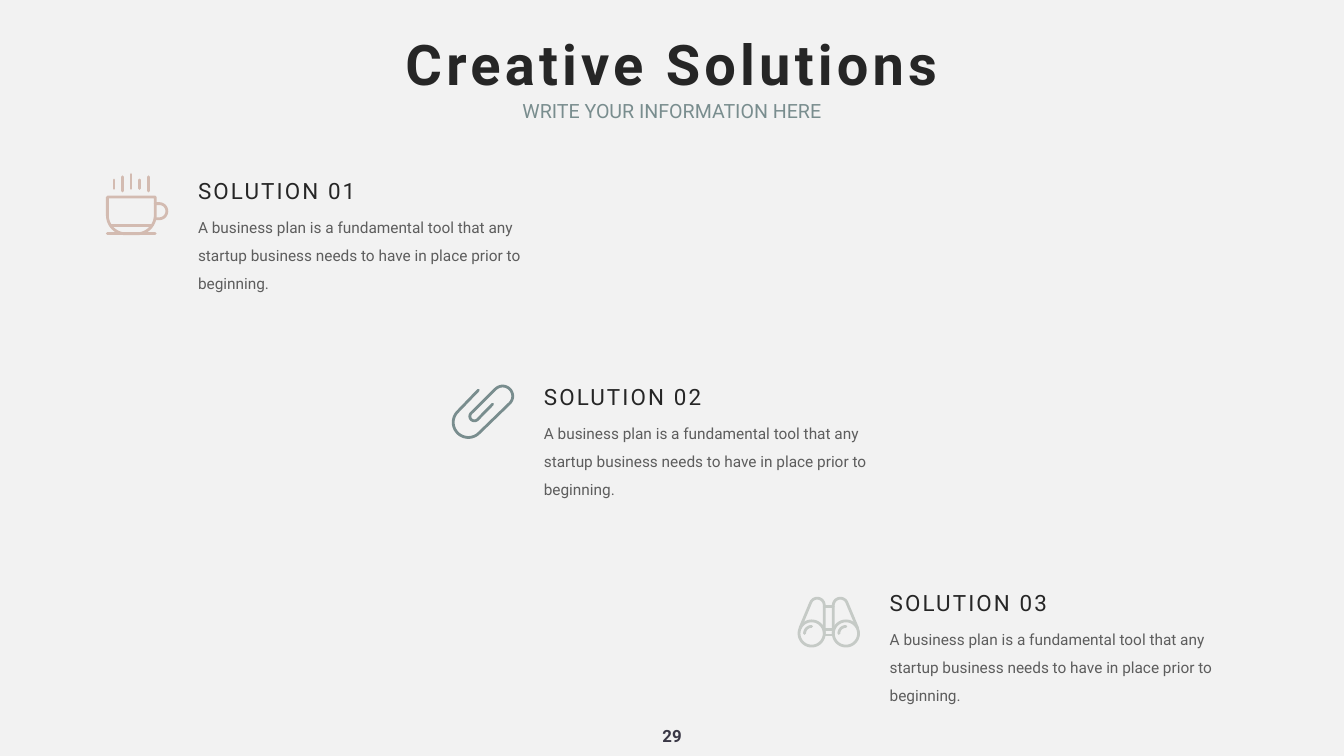
import math

import pptx
import pptx.dml.color
import pptx.enum.text
import pptx.oxml.ns
import pptx.util
from lxml import etree
from pptx.util import Inches

FONT = "Roboto"
COLORS = {
    "background": "F2F2F2",
    "heading": "262626",
    "subtitle": "798D8E",
    "body": "5D5D5D",
    "page": "3A3846",
    "cup": "D3BBB1",
    "clip": "798D8E",
    "binoculars": "C5CAC6",
}
STYLES = {
    "title": {"size": 80, "bold": True, "color": "heading", "spacing": 6},
    "subtitle": {"size": 28, "color": "subtitle", "line": 40, "after": 12},
    "heading": {"size": 32, "color": "heading", "spacing": 3},
    "body": {"size": 22, "color": "body", "line": 40, "after": 18},
    "page": {"size": 24, "bold": True, "color": "page"},
}
BODY = ("A business plan is a fundamental tool that any startup business "
        "needs to have in place prior to beginning.")
ICON_STROKE = 4
ANCHOR = pptx.enum.text.MSO_ANCHOR
ALIGN = pptx.enum.text.PP_ALIGN


def rgb(name):
    return pptx.dml.color.RGBColor.from_string(COLORS[name])


def add_text(slide, box, text, style, anchor=ANCHOR.TOP, align=ALIGN.LEFT, wrap=False):
    look = STYLES[style]
    frame = slide.shapes.add_textbox(*map(Inches, box)).text_frame
    frame_format = {
        "word_wrap": wrap,
        "vertical_anchor": anchor,
        "auto_size": pptx.enum.text.MSO_AUTO_SIZE.SHAPE_TO_FIT_TEXT,
    }
    for key, value in frame_format.items():
        setattr(frame, key, value)
    paragraph = frame.paragraphs[0]
    paragraph.alignment = align
    if "line" in look:
        paragraph.line_spacing = pptx.util.Pt(look["line"])
        paragraph.space_after = pptx.util.Pt(look["after"])
    run = paragraph.add_run()
    run.text = text
    font_format = {
        "name": FONT,
        "size": pptx.util.Pt(look["size"]),
        "bold": look.get("bold", False),
    }
    for key, value in font_format.items():
        setattr(run.font, key, value)
    run.font.color.rgb = rgb(look["color"])
    if "spacing" in look:
        run.font.element.set("spc", str(look["spacing"] * 100)) if hasattr(
            run.font, "element") else run._r.get_or_add_rPr().set("spc", str(look["spacing"] * 100))


def arc(x, y, radius, start, end, steps=24):
    """Points along a circle, with angles in degrees running clockwise from the right."""
    angles = (math.radians(start + (end - start) * i / steps) for i in range(steps + 1))
    return [(x + radius * math.cos(a), y + radius * math.sin(a)) for a in angles]


def cup_strokes():
    steam_spans = [(0.14, 0.31), (0.08, 0.36), (0.03, 0.31), (0.08, 0.36), (0.14, 0.31)]
    steam_spans[3:] = [(0.14, 0.31), (0.08, 0.36)]
    steam = [[(0.16 + 0.17 * i, top), (0.16 + 0.17 * i, bottom)]
             for i, (top, bottom) in enumerate(steam_spans)]
    bowl = ([(0.03, 0.84), (0.03, 0.48), (0.98, 0.48)]
            + arc(0.61, 0.84, 0.37, 0, 90) + arc(0.4, 0.84, 0.37, 90, 180))
    handle = [(0.98, 0.61)] + arc(1.06, 0.76, 0.15, -90, 90) + [(0.98, 0.91)]
    liquid = [(0.1, 1.04), (0.91, 1.04)]
    saucer = [(0.03, 1.21), (0.98, 1.21)]
    return steam + [bowl, handle, liquid, saucer]


def clip_strokes():
    return [[(0.53, 0.1)] + arc(0.33, 0.74, 0.3, 225, 45) + arc(1.01, 0.22, 0.2, 45, -135)
            + arc(0.45, 0.62, 0.09, 225, 45) + [(0.81, 0.38)]]


def binoculars_strokes():
    lens = arc(0.28, 0.73, 0.25, 0, 360, 48)
    tube = [(0.05, 0.62)] + arc(0.39, 0.17, 0.14, 200, 360) + [(0.53, 0.73)]
    mirrored = [[(1.24 - x, y) for x, y in stroke] for stroke in (lens, tube)]
    glints = [arc(x, 0.73, 0.14, 180, 270) for x in (0.28, 0.96)]
    bridges = [[(0.53, y), (0.71, y)] for y in (0.2, 0.65, 0.76)]
    return [lens, tube] + mirrored + glints + bridges


def add_icon(slide, left, top, strokes, color):
    """Draws all strokes of an icon as one outline with round ends."""
    placed = [[(Inches(left + x), Inches(top + y)) for x, y in stroke] for stroke in strokes]
    builder = slide.shapes.build_freeform(*placed[0][0])
    for i, stroke in enumerate(placed):
        if i:
            builder.move_to(*stroke[0])
        builder.add_line_segments(stroke[1:], close=False)
    icon = builder.convert_to_shape()
    icon.shadow.inherit = False
    icon.fill.background()
    icon.line.color.rgb = rgb(color)
    icon.line.width = pptx.util.Pt(ICON_STROKE)
    outline = icon.element.spPr.find(pptx.oxml.ns.qn("a:ln"))
    outline.set("cap", "rnd")
    etree.SubElement(outline, pptx.oxml.ns.qn("a:round"))


def add_header(slide, left, top, width):
    add_text(slide, (left, top, width, 1.45), "Creative Solutions", "title",
             ANCHOR.BOTTOM, ALIGN.CENTER)
    add_text(slide, (left, top + 1.31, width, 0.62), "WRITE YOUR INFORMATION HERE",
             "subtitle", align=ALIGN.CENTER)


def add_solution(slide, left, top, heading, strokes, color, icon_drop):
    text_left = left + 1.73
    add_text(slide, (text_left, top + 0.63, 7.44, 1.16), BODY, "body", wrap=True)
    add_text(slide, (text_left, top, 3.38, 0.64), heading, "heading", ANCHOR.BOTTOM)
    add_icon(slide, left, top + icon_drop, strokes, color)


def main():
    presentation = pptx.Presentation()
    presentation.slide_width = Inches(26.66)
    presentation.slide_height = Inches(15)
    slide = presentation.slides.add_slide(presentation.slide_layouts[6])
    slide.background.fill.solid()
    slide.background.fill.fore_color.rgb = rgb("background")

    add_text(slide, (13.02, 14.35, 0.62, 0.5), "29", "page", ANCHOR.MIDDLE, ALIGN.CENTER)
    add_header(slide, 7.84, 0.52, 10.97)
    solutions = [
        (cup_strokes(), "cup", -0.02),
        (clip_strokes(), "clip", 0.1),
        (binoculars_strokes(), "binoculars", 0.21),
    ]
    for i, (strokes, color, icon_drop) in enumerate(solutions):
        add_solution(slide, 2.1 + 6.86 * i, 3.45 + 4.09 * i, f"SOLUTION {i + 1:02}",
                     strokes, color, icon_drop)
    presentation.save("out.pptx")


if __name__ == "__main__":
    main()
